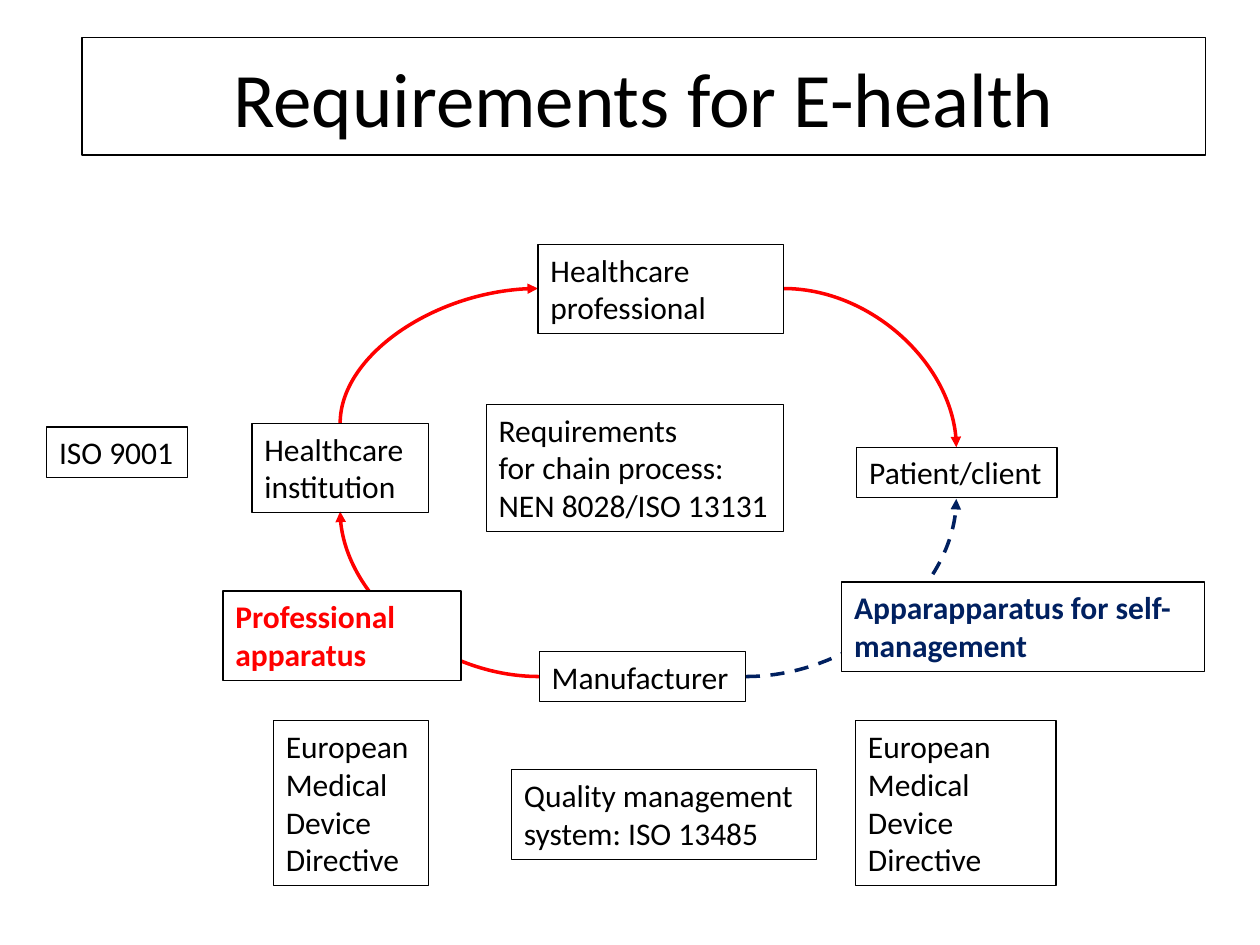
from pptx import Presentation
from pptx import util as u
from pptx.dml.color import RGBColor
from pptx.enum import dml, shapes, text
from pptx.oxml.ns import qn
from lxml import etree

BLACK, WHITE, RED, NAVY = "000000", "FFFFFF", "FF0000", "002060"


def rgb(code):
    return RGBColor.from_string(code)


def style(shape, size, color=BLACK, bold=False):
    shape.line.color.rgb = rgb(BLACK)
    shape.line.width = u.Pt(0.75)
    for para in shape.text_frame.paragraphs:
        font = para.font
        font.name, font.size, font.bold = "Calibri", u.Pt(size), bold
        font.color.rgb = rgb(color)


deck = Presentation()
deck.slide_width, deck.slide_height = u.Inches(10), u.Inches(7.5)
slide = deck.slides.add_slide(deck.slide_layouts[5])

# Title
title = slide.shapes.title
title.left, title.top = u.Inches(0.65), u.Inches(0.3)
title.width, title.height = u.Inches(8.92), u.Inches(0.93)
title.text_frame.text = "Requirements for E-health"
title.text_frame.vertical_anchor = text.MSO_ANCHOR.MIDDLE
title.text_frame.paragraphs[0].alignment = text.PP_ALIGN.CENTER
style(title, 44)

# Curved arrows: start, end, colour, whether it leaves vertically
curves = [
    ((4.28, 5.37), (2.7, 4.06), RED, False),
    ((2.7, 3.36), (4.27, 2.29), RED, True),
    ((6.22, 2.29), (7.59, 3.55), RED, False),
    ((5.92, 5.37), (7.59, 3.96), NAVY, False),
]
for (x1, y1), (x2, y2), color, upright in curves:
    if upright:
        # Swap the sides about the centre, then turn a quarter
        cx, cy = (x1 + x2) / 2, (y1 + y2) / 2
        dx, dy = abs(y2 - y1) / 2, abs(x2 - x1) / 2
        x1, y1, x2, y2 = cx + dx, cy + dy, cx - dx, cy - dy
    arrow = slide.shapes.add_connector(
        shapes.MSO_CONNECTOR.CURVE, *map(u.Inches, (x1, y1, x2, y2)))
    arrow.line.color.rgb = rgb(color)
    arrow.line.width = u.Pt(2)
    if color == NAVY:
        arrow.line.dash_style = dml.MSO_LINE.DASH
    props = arrow._element.spPr
    props.find(qn("a:prstGeom")).set("prst", "curvedConnector2")
    if upright:
        props.find(qn("a:xfrm")).set("rot", "5400000")
    tail = etree.SubElement(props.find(qn("a:ln")), qn("a:tailEnd"))
    tail.set("type", "triangle")
    etree.SubElement(props, qn("a:effectLst"))

# Boxes: left, top, width, height, wrap, wording, text colour
rule = "European Medical Device Directive"
boxes = [
    (3.86, 3.21, 2.36, 1.01, False,
     "Requirements\nfor chain process:\nNEN 8028/ISO 13131", BLACK),
    (4.28, 5.17, 1.64, 0.4, True, "Manufacturer", BLACK),
    (2, 3.36, 1.4, 0.71, True, "Healthcare institution", BLACK),
    (6.8, 3.55, 1.59, 0.4, False, "Patient/client", BLACK),
    (4.27, 1.94, 1.95, 0.71, True, "Healthcare professional", BLACK),
    (4.06, 6.11, 2.42, 0.71, False,
     "Quality management\nsystem: ISO 13485", BLACK),
    (0.37, 3.39, 1.12, 0.4, False, "ISO 9001", BLACK),
    (2.17, 5.72, 1.23, 1.31, True, rule, BLACK),
    (6.79, 5.72, 1.59, 1.31, True, rule, BLACK),
    (1.77, 4.69, 1.89, 0.71, True, "Professional apparatus", RED),
    (6.68, 4.62, 2.88, 0.71, True,
     "Apparapparatus for self-management", NAVY),
]
for x, y, w, h, wrap, words, color in boxes:
    box = slide.shapes.add_textbox(*map(u.Inches, (x, y, w, h)))
    frame = box.text_frame
    frame.text = words
    frame.word_wrap = wrap
    frame.auto_size = text.MSO_AUTO_SIZE.SHAPE_TO_FIT_TEXT
    style(box, 18, color, color != BLACK)
    # Coloured labels cover the arrows behind them
    if color != BLACK:
        box.fill.solid()
        box.fill.fore_color.rgb = rgb(WHITE)

deck.save("out.pptx")
